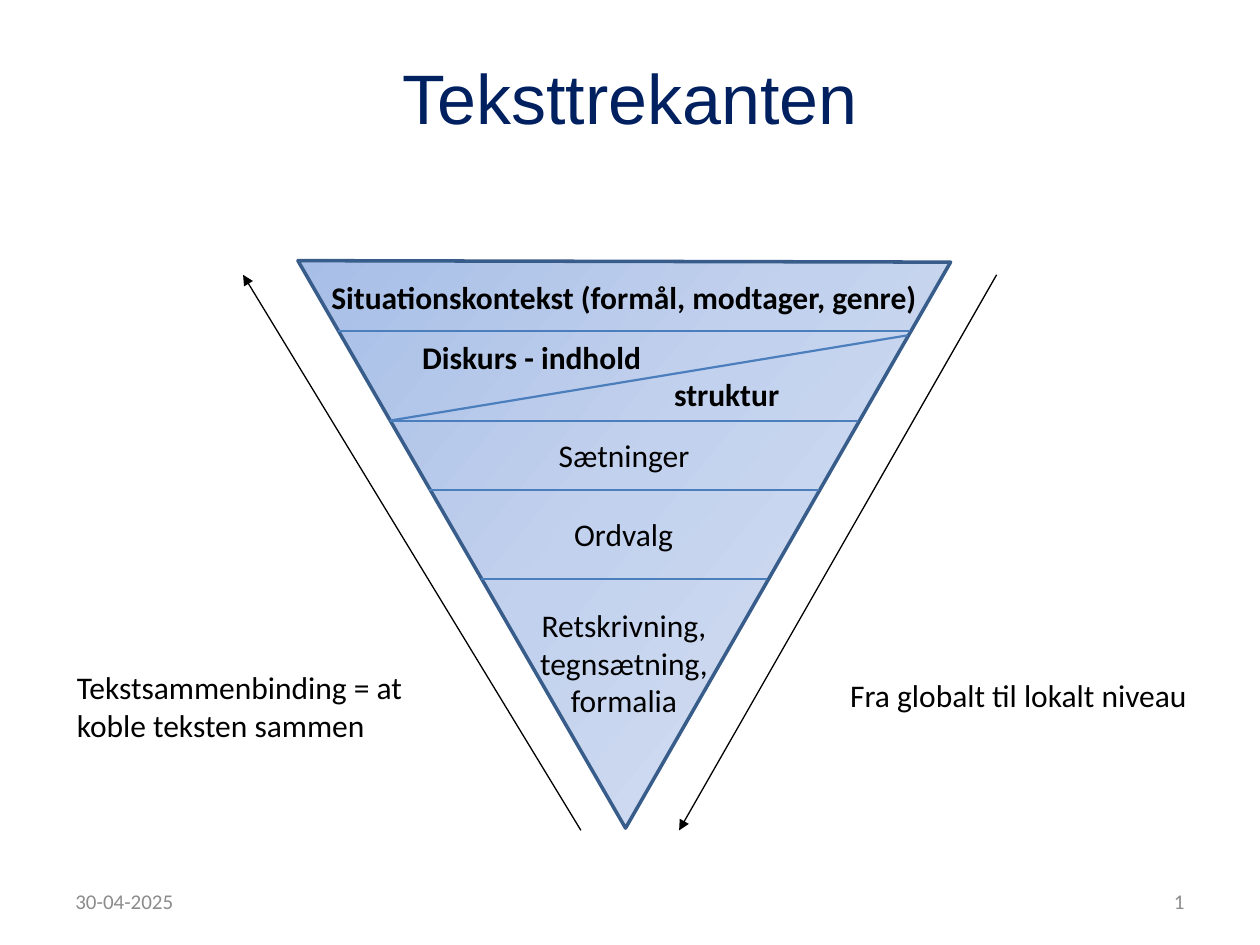
"""Build a slide showing the text triangle, from context down to spelling."""
from copy import deepcopy

from lxml import etree
from pptx import Presentation
from pptx.dml.color import RGBColor
from pptx.enum.shapes import MSO_CONNECTOR, MSO_SHAPE
from pptx.enum.text import MSO_ANCHOR, PP_ALIGN
from pptx.oxml.ns import qn
from pptx.util import Cm, Pt

STRAIGHT = MSO_CONNECTOR.STRAIGHT
TRIANGLE = MSO_SHAPE.ISOSCELES_TRIANGLE
LEFT, CENTER, RIGHT = PP_ALIGN.LEFT, PP_ALIGN.CENTER, PP_ALIGN.RIGHT
TOP, MIDDLE = MSO_ANCHOR.TOP, MSO_ANCHOR.MIDDLE

THEME = {
    "title": {"name": "Arial", "size": 40, "color": "002060", "bold": False},
    "body": {"name": "Calibri", "size": 18, "color": "000000", "bold": False},
    "strong": {"name": "Calibri", "size": 18, "color": "000000", "bold": True},
    "footer": {"name": "Calibri", "size": 12, "color": "8C8C8C", "bold": False},
    "gradient": [(0, "9AB5E4"), (0.5, "C2D1ED"), (1, "E1E8F5")],
    "outline": ("385D8A", 2),
    "divider": ("4B7EBC", 1.25),
    "arrow": ("000000", 0.75),
}

TITLE = "Teksttrekanten"
APEX_X, APEX_Y, HALF_WIDTH_RATIO = 12.58, 16.7, 0.575
TRIANGLE_BOX = (7.63, 2.44, 13.21, 11.38)
TAB_STOPS = [2.54, 5.08]
DIVIDERS = [6.68, 8.48, 9.88, 11.68]
LEVELS = [
    ("Situationskontekst (formål, modtager, genre)", 5.49, 12.42, 1.02, "strong", CENTER),
    ("Diskurs - indhold\v\t\tstruktur", 6.68, 7.72, 1.78, "strong", LEFT),
    ("Sætninger", 8.66, 3.15, 1.02, "body", CENTER),
    ("Ordvalg", 10.26, 2.51, 1.02, "body", LEFT),
    ("Retskrivning,\ntegnsætning,\nformalia", 12.09, 3.89, 2.54, "body", CENTER),
]
LEVEL_SHIFTS = {1: -0.46}
ARROWS = [((11.71, 16.74), (4.9, 5.54)), ((20.09, 5.54), (13.69, 16.74))]
SIDE_TEXTS = [
    ("Tekstsammenbinding = at koble teksten sammen", (1.3, 13.34, 7.21, 1.78), "body", LEFT, TOP),
    ("Fra globalt til lokalt niveau", (16.89, 13.51, 7.39, 1.02), "body", LEFT, TOP),
    ("30-04-2025", (1.27, 17.65, 5.92, 1.02), "footer", LEFT, MIDDLE),
    ("1", (18.21, 17.65, 5.92, 1.02), "footer", RIGHT, MIDDLE),
]


def apply(target, values):
    for name, value in values.items():
        setattr(target, name, value)


def add_tab_stops(paragraph):
    tab_list = etree.SubElement(paragraph._p.get_or_add_pPr(), qn("a:tabLst"))
    for position in TAB_STOPS:
        etree.SubElement(tab_list, qn("a:tab"), pos=str(Cm(position)), algn="l")


def write(shape, text, style, align, anchor, wrap=True):
    frame = shape.text_frame
    apply(frame, {"text": text, "word_wrap": wrap, "vertical_anchor": anchor})
    font_style = THEME[style]
    for paragraph in frame.paragraphs:
        paragraph.alignment = align
        if "\t" in paragraph.text:
            add_tab_stops(paragraph)
        for run in paragraph.runs:
            apply(run.font, {"name": font_style["name"], "size": Pt(font_style["size"]),
                             "bold": font_style["bold"]})
            run.font.color.rgb = RGBColor.from_string(font_style["color"])


def add_text(shapes, box, *text_format):
    write(shapes.add_textbox(*map(Cm, box)), *text_format)


def style_line(line, style):
    color, width = THEME[style]
    line.color.rgb = RGBColor.from_string(color)
    line.width = Pt(width)


def add_line(shapes, start, end, style):
    connector = shapes.add_connector(STRAIGHT, *map(Cm, start + end))
    style_line(connector.line, style)
    etree.SubElement(connector._element.spPr, qn("a:effectLst"))
    return connector


def add_triangle(shapes):
    triangle = shapes.add_shape(TRIANGLE, *map(Cm, TRIANGLE_BOX))
    triangle.rotation = 60
    triangle.shadow.inherit = False
    style_line(triangle.line, "outline")
    triangle.fill.gradient()
    triangle.fill.gradient_angle = 20
    stop_list = triangle._element.spPr.find(".//" + qn("a:gsLst"))
    stop_list.append(deepcopy(stop_list[-1]))
    for stop, (position, color) in zip(triangle.fill.gradient_stops, THEME["gradient"]):
        stop.position = position
        stop.color.rgb = RGBColor.from_string(color)


def edges(y):
    half_width = (APEX_Y - y) * HALF_WIDTH_RATIO
    return (APEX_X - half_width, y), (APEX_X + half_width, y)


def add_text_triangle(slide):
    shapes = slide.shapes.add_group_shape().shapes
    add_triangle(shapes)
    for index, (text, top, width, height, style, align) in enumerate(LEVELS):
        left = APEX_X - width / 2 + LEVEL_SHIFTS.get(index, 0)
        add_text(shapes, (left, top, width, height), text, style, align, TOP, False)
    for y in DIVIDERS:
        add_line(shapes, *edges(y), "divider")
    add_line(shapes, edges(DIVIDERS[1])[0], edges(DIVIDERS[0] + 0.08)[1], "divider")


def main():
    presentation = Presentation()
    apply(presentation, {"slide_width": Cm(25.4), "slide_height": Cm(19.05)})
    slide = presentation.slides.add_slide(presentation.slide_layouts[5])
    title = slide.shapes.title
    apply(title, {"left": Cm(1.27), "top": Cm(0.36), "width": Cm(22.86), "height": Cm(3.18)})
    write(title, TITLE, "title", CENTER, MIDDLE)
    add_text_triangle(slide)
    for start, end in ARROWS:
        arrow = add_line(slide.shapes, start, end, "arrow")
        etree.SubElement(arrow.line._get_or_add_ln(), qn("a:tailEnd"), type="triangle")
    for text, box, style, align, anchor in SIDE_TEXTS:
        add_text(slide.shapes, box, text, style, align, anchor)
    presentation.save("out.pptx")


if __name__ == "__main__":
    main()
